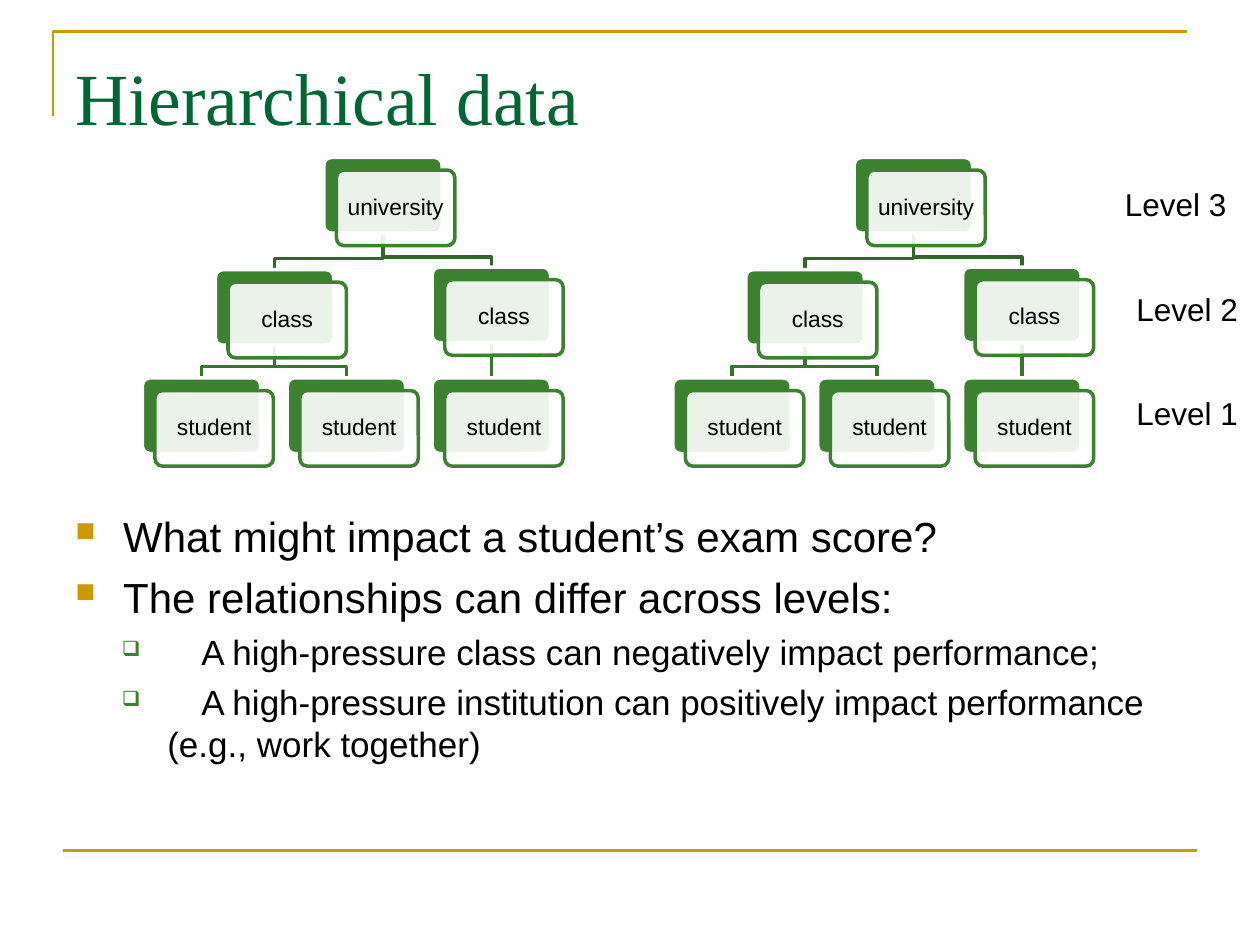
from lxml import etree
from pptx import Presentation
from pptx.dml.color import RGBColor
from pptx.enum.shapes import MSO_CONNECTOR, MSO_SHAPE
from pptx.enum.text import MSO_ANCHOR, PP_ALIGN
from pptx.oxml.ns import qn
from pptx.util import Inches, Pt

ROUNDED = MSO_SHAPE.ROUNDED_RECTANGLE
STRAIGHT = MSO_CONNECTOR.STRAIGHT
MIDDLE = MSO_ANCHOR.MIDDLE
LEFT, CENTER = PP_ALIGN.LEFT, PP_ALIGN.CENTER

GOLD = RGBColor(0xCC, 0x99, 0x00)
TITLE_GREEN = RGBColor(0x00, 0x66, 0x33)
CARD_GREEN = RGBColor(0x3B, 0x81, 0x2F)
UPPER_BRANCH = RGBColor(0x2F, 0x67, 0x26)
LOWER_BRANCH = RGBColor(0x36, 0x75, 0x2B)
WHITE = RGBColor(0xFF, 0xFF, 0xFF)
BLACK = RGBColor(0x00, 0x00, 0x00)

CARD_WIDTH, CARD_HEIGHT, CARD_OFFSET = 0.94, 0.6, 0.1
TREE_STEP = 4.21

# name: (label, left, top)
CARDS = {
    "university": ("university", 2.57, 1.25),
    "class 1": ("class", 1.71, 2.14),
    "student 1": ("student", 1.13, 3),
    "student 2": ("student", 2.28, 3),
    "class 2": ("class", 3.43, 2.12),
    "student 3": ("student", 3.43, 3),
}
# parent, child, height of the bend, colour
BRANCHES = [
    ("university", "class 2", 2.04, UPPER_BRANCH),
    ("class 1", "student 2", 2.91, LOWER_BRANCH),
    ("class 1", "student 1", 2.91, LOWER_BRANCH),
    ("university", "class 1", 2.05, UPPER_BRANCH),
]
LEVELS = [("Level 1", 8.92, 3.08), ("Level 2", 8.92, 2.25), ("Level 3", 8.83, 1.42)]

# text, size, space before, left margin, hanging indent, level, bullet, colour, percent
BULLETS = [
    ("What might impact a student’s exam score?", 24, 6, 0.38, 0.38, 0, "■", GOLD, 65),
    ("The relationships can differ across levels:", 24, 6, 0.38, 0.38, 0, "■", GOLD, 65),
    ("\tA high-pressure class can negatively impact performance;",
     20, 5, 0.73, 0.36, 1, "❑", CARD_GREEN, 60),
    ("\tA high-pressure institution can positively impact performance (e.g., work together)",
     20, 5, 0.73, 0.36, 1, "❑", CARD_GREEN, 60),
]


def write_text(paragraph, text, size, font="Arial", color=BLACK, align=LEFT):
    paragraph.alignment = align
    run = paragraph.add_run()
    run.text = text
    run.font.size = Pt(size)
    run.font.name = font
    run.font.color.rgb = color


def draw_open_line(shapes, points, color, width):
    """Draw an unfilled line through points given in inches."""
    corners = [(Inches(x), Inches(y)) for x, y in points]
    builder = shapes.build_freeform(*corners[0])
    builder.add_line_segments(corners[1:], close=False)
    shape = builder.convert_to_shape()
    shape.shadow.inherit = False
    shape.fill.background()
    shape.line.color.rgb = color
    shape.line.width = Pt(width)


presentation = Presentation()
presentation.slide_width = Inches(10)
presentation.slide_height = Inches(7.5)
slide = presentation.slides.add_slide(presentation.slide_layouts[6])

# Frame lines
draw_open_line(slide.shapes, [(0.42, 0.92), (0.42, 0.25), (9.42, 0.25)], GOLD, 1.5)
footer_line = slide.shapes.add_connector(
    STRAIGHT, Inches(0.5), Inches(6.75), Inches(9.5), Inches(6.75))
footer_line.line.color.rgb = GOLD
footer_line.line.width = Pt(1.5)
etree.SubElement(footer_line.element.spPr, qn("a:effectLst"))

# Title
title_frame = slide.shapes.add_textbox(
    Inches(0.5), Inches(0.3), Inches(9), Inches(1.25)).text_frame
title_frame.word_wrap = True
title_frame.margin_top = Inches(0.11)
write_text(title_frame.paragraphs[0], "Hierarchical data", 42,
           font="Times New Roman", color=TITLE_GREEN)

# Bulleted body
body_frame = slide.shapes.add_textbox(
    Inches(0.5), Inches(4), Inches(9), Inches(2.7)).text_frame
body_frame.word_wrap = True
for index, (text, size, space, margin, hanging, level, bullet, color, percent) in enumerate(BULLETS):
    paragraph = body_frame.add_paragraph() if index else body_frame.paragraphs[0]
    write_text(paragraph, text, size)
    paragraph.level = level
    paragraph.space_before = Pt(space)
    properties = paragraph._p.get_or_add_pPr()
    properties.set("marL", str(Inches(margin)))
    properties.set("indent", str(-Inches(hanging)))
    bullet_color = etree.SubElement(properties, qn("a:buClr"))
    etree.SubElement(bullet_color, qn("a:srgbClr"), val=str(color))
    etree.SubElement(properties, qn("a:buSzPct"), val=str(percent * 1000))
    etree.SubElement(properties, qn("a:buChar"), char=bullet)

# Two identical trees, branches behind the cards
for tree_left in (0, TREE_STEP):
    shapes = slide.shapes.add_group_shape().shapes

    straight_branch = shapes.add_connector(STRAIGHT, 0, 0, 0, 0)
    straight_branch.line.color.rgb = LOWER_BRANCH
    straight_branch.line.width = Pt(2)
    etree.SubElement(straight_branch.element.spPr, qn("a:effectLst"))

    for parent, child, bend, color in BRANCHES:
        _, parent_left, parent_top = CARDS[parent]
        _, child_left, child_top = CARDS[child]
        start_x = tree_left + parent_left + CARD_WIDTH / 2
        end_x = tree_left + child_left + CARD_WIDTH / 2
        draw_open_line(shapes, [(start_x, parent_top + CARD_HEIGHT), (start_x, bend),
                                (end_x, bend), (end_x, child_top)], color, 2)

    back_cards = {}
    for name, (label, left, top) in CARDS.items():
        for offset, fill, outline in ((0, CARD_GREEN, WHITE), (CARD_OFFSET, WHITE, CARD_GREEN)):
            card = shapes.add_shape(
                ROUNDED, Inches(tree_left + left + offset), Inches(top + offset),
                Inches(CARD_WIDTH), Inches(CARD_HEIGHT))
            card.adjustments[0] = 0.1
            card.shadow.inherit = False
            card.fill.solid()
            card.fill.fore_color.rgb = fill
            card.line.color.rgb = outline
            card.line.width = Pt(2)
            if not offset:
                back_cards[name] = card
        # The front card is translucent and carries the label
        fill_color = card.element.spPr.find(qn("a:solidFill")).find(qn("a:srgbClr"))
        etree.SubElement(fill_color, qn("a:alpha"), val="90000")
        frame = card.text_frame
        frame.word_wrap = True
        frame.vertical_anchor = MIDDLE
        frame.margin_left = frame.margin_right = Inches(0.05)
        frame.margin_top = frame.margin_bottom = Inches(0.05)
        frame.paragraphs[0].line_spacing = 0.9
        write_text(frame.paragraphs[0], label, 13, align=CENTER)

    straight_branch.begin_connect(back_cards["class 2"], 2)
    straight_branch.end_connect(back_cards["student 3"], 0)

# Level labels
for label, left, top in LEVELS:
    frame = slide.shapes.add_textbox(
        Inches(left), Inches(top), Inches(1.08), Inches(0.4)).text_frame
    frame.word_wrap = True
    write_text(frame.paragraphs[0], label, 18)

presentation.save("out.pptx")
